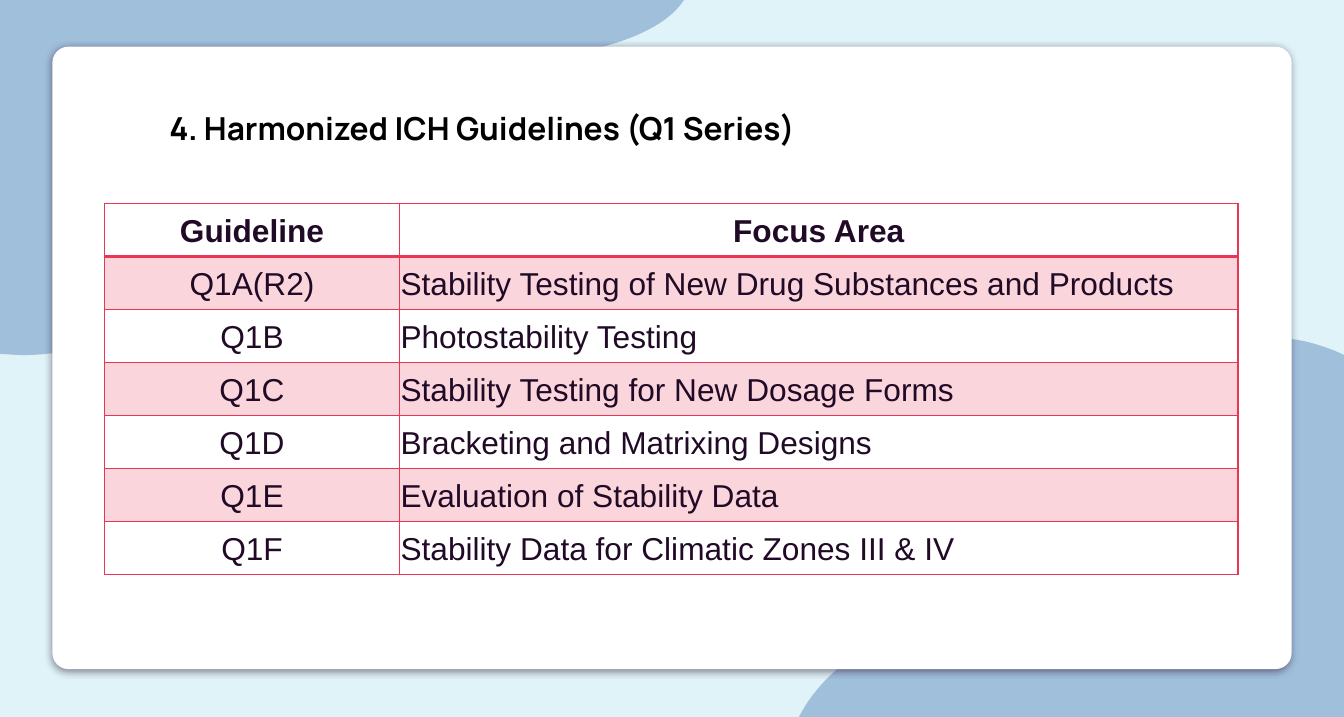
from lxml import etree
from pptx import Presentation
from pptx import util as u
from pptx.dml.color import RGBColor
from pptx.enum import shapes, text
from pptx.oxml.ns import qn

BLUE, PINK, INK = "A0BFDB", "EA3554", "210A26"
ROWS = [
    ("Guideline", "Focus Area"),
    ("Q1A(R2)", "Stability Testing of New Drug Substances and Products"),
    ("Q1B", "Photostability Testing"),
    ("Q1C", "Stability Testing for New Dosage Forms"),
    ("Q1D", "Bracketing and Matrixing Designs"),
    ("Q1E", "Evaluation of Stability Data"),
    ("Q1F", "Stability Data for Climatic Zones III & IV"),
]
# Outlines: one point is a straight step, three points are a curve
LEFT = [
    [(6.01, 0)],
    [(5.79, .34), (5.07, .56), (3.88, .56)],
    [(3.84, .56), (3.8, .56), (3.75, .56)],
    [(3.74, .56), (3.72, .56), (3.71, .56)],
    [(1.93, .56), (2.67, 2.04), (1.36, 2.82)],
    [(1.01, 3.02), (.54, 3.12), (.2, 3.12)],
    [(.13, 3.12), (.06, 3.11), (0, 3.11)],
    [(0, 0)],
]
RIGHT = [
    [(4.19, 0)],
    [(4.5, 0), (4.79, .15), (4.79, .15)],
    [(4.79, 3.33)],
    [(0, 3.33)],
    [(.6, 2.18), (2.51, 2.4), (3.3, 2.17)],
    [(4.08, 1.95), (3.21, .85), (3.64, .26)],
    [(3.79, .06), (3.99, 0), (4.19, 0)],
]


def color(code):
    return RGBColor.from_string(code)


def paint(item, code):
    item.fill.solid()
    item.fill.fore_color.rgb = color(code)


def node(parent, tag, **attrs):
    return etree.SubElement(parent, qn(tag), {k: str(v) for k, v in attrs.items()})


def write(frame, words, font="Arial", size=20, code=INK, bold=False,
          align=None, line=None, after=None):
    para = frame.paragraphs[0]
    para.alignment, para.line_spacing = align, line
    if after is not None:
        para.space_after = u.Pt(after)
    run = para.add_run()
    run.text = words
    run.font.name, run.font.size, run.font.bold = font, u.Pt(size), bold
    run.font.color.rgb = color(code)


def blob(slide, left, top, steps):
    spots = [(u.Inches(left + x), u.Inches(top + y)) for step in steps for x, y in step]
    draw = slide.shapes.build_freeform(*spots[0])
    draw.add_line_segments(spots[1:], close=True)
    shape = draw.convert_to_shape()
    # Join each group of three points into one curve
    lines = iter(list(shape.element.iter(qn("a:lnTo"))))
    for step in steps[1:]:
        group = [next(lines) for _ in step]
        if len(group) == 3:
            curve = etree.Element(qn("a:cubicBezTo"))
            group[0].addprevious(curve)
            for line in group:
                curve.append(line[0])
                line.getparent().remove(line)
    shape.shadow.inherit = False
    paint(shape, BLUE)
    shape.line.fill.background()


def card(slide, *box):
    shape = slide.shapes.add_shape(shapes.MSO_SHAPE.ROUNDED_RECTANGLE, *map(u.Inches, box))
    shape.adjustments[0] = .026
    paint(shape, "FFFFFF")
    shape.line.fill.background()
    # Soft shadow below the card
    shape.shadow.inherit = False
    glow = node(shape.element.spPr.find(qn("a:effectLst")), "a:outerShdw",
                blurRad=u.Pt(4.5), dist=u.Pt(1.5), dir=5400000, algn="bl", rotWithShape=0)
    node(node(glow, "a:srgbClr", val=INK), "a:alpha", val=50000)


def title(slide, words, *box):
    frame = slide.shapes.add_textbox(*map(u.Inches, box)).text_frame
    frame.word_wrap = True
    frame.auto_size = text.MSO_AUTO_SIZE.SHAPE_TO_FIT_TEXT
    write(frame, words, font="Manrope", code="000000", bold=True)


def edge(cell, side, width):
    line = node(cell._tc.get_or_add_tcPr(), "a:ln" + side, w=u.Pt(width))
    node(node(line, "a:solidFill"), "a:srgbClr", val=PINK)


def grid(slide, left, top, width, height, first):
    table = slide.shapes.add_table(
        len(ROWS), 2, *map(u.Inches, (left, top, width, height))).table
    table.first_row = table.horz_banding = False
    table.columns[0].width = u.Inches(first)
    table.columns[1].width = u.Inches(width - first)
    for r, row in enumerate(ROWS):
        for c, words in enumerate(row):
            cell = table.cell(r, c)
            cell.margin_left = cell.margin_right = u.Inches(.01)
            cell.margin_top = cell.margin_bottom = u.Inches(.01)
            cell.vertical_anchor = text.MSO_ANCHOR.MIDDLE
            for side in "LRTB":
                thick = (r, side) in ((0, "B"), (1, "T"))
                edge(cell, side, 2 if thick else 1)
            # Every other row is tinted
            if r % 2:
                paint(cell, PINK)
                tint = cell._tc.tcPr.find(qn("a:solidFill"))[0]
                node(tint, "a:alpha", val=20000)
            else:
                cell.fill.background()
            middle = r == 0 or c == 0
            write(cell.text_frame, words, bold=r == 0, line=1.07, after=8,
                  align=text.PP_ALIGN.CENTER if middle else text.PP_ALIGN.LEFT)


def main():
    deck = Presentation()
    deck.slide_width, deck.slide_height = u.Inches(11.81), u.Inches(6.3)
    slide = deck.slides.add_slide(deck.slide_layouts[6])
    # Backdrop
    paint(slide.background, "DFF3F8")
    blob(slide, 7.02, 2.97, RIGHT)
    blob(slide, 0, 0, LEFT)
    card(slide, .46, .41, 10.89, 5.47)
    # Content
    title(slide, "4. Harmonized ICH Guidelines (Q1 Series)", 1.39, .91, 9.07, .44)
    grid(slide, .92, 1.79, 9.96, 3.26, first=2.59)
    deck.save("out.pptx")


if __name__ == "__main__":
    main()
